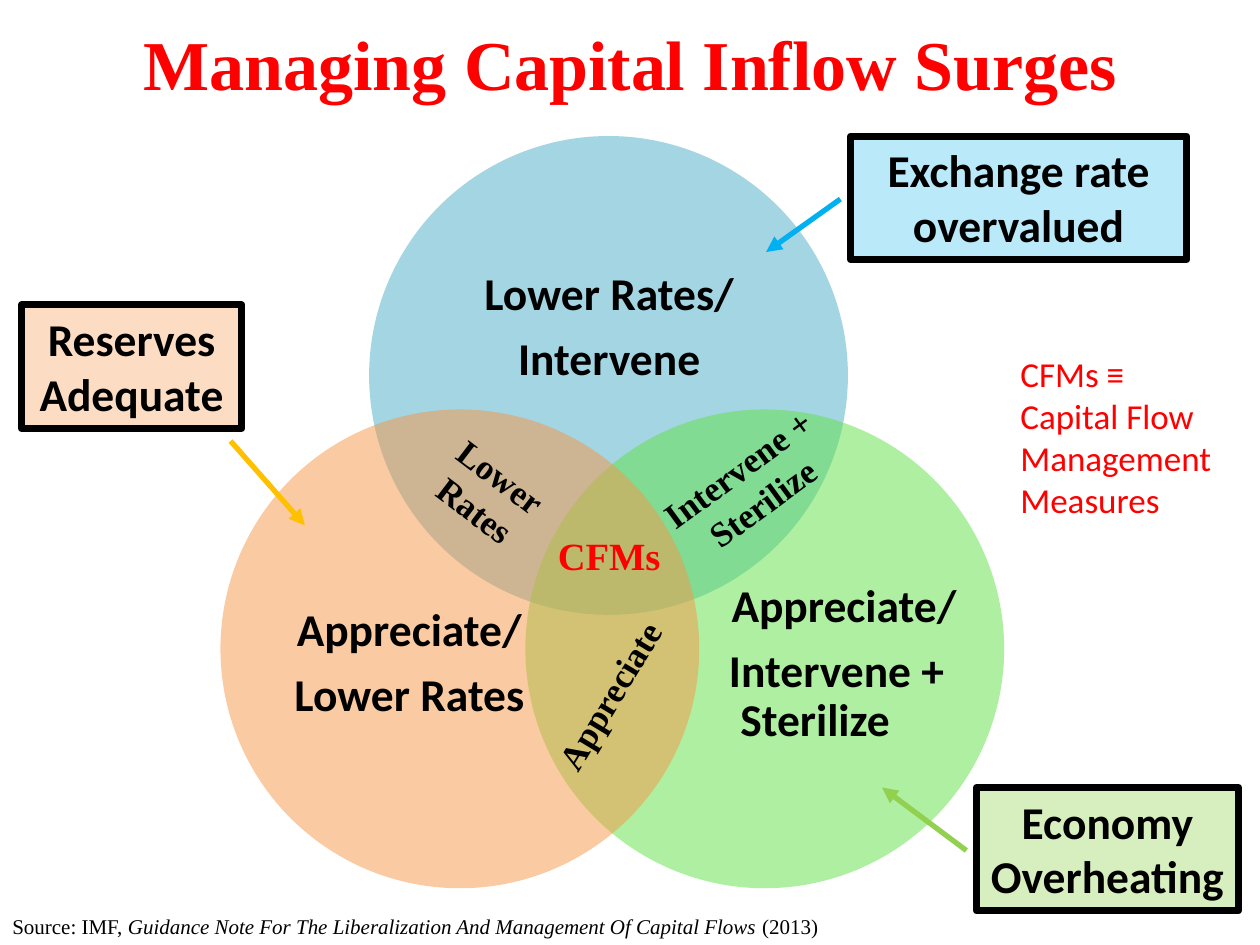
import lxml.etree
import pptx
import pptx.util
import pptx.dml.color
import pptx.enum.shapes
import pptx.enum.text
import pptx.oxml.ns
from dataclasses import dataclass

Inches = pptx.util.Inches
Pt = pptx.util.Pt
SHAPE = pptx.enum.shapes.MSO_SHAPE
ALIGN = pptx.enum.text.PP_ALIGN
ANCHOR = pptx.enum.text.MSO_ANCHOR


@dataclass(frozen=True)
class Theme:
    serif: str = "Times New Roman"
    sans: str = "Calibri"
    black: str = "000000"
    red: str = "FF0000"
    teal: str = "4BACC6"
    green: str = "60E146"
    orange: str = "F79646"
    blue: str = "00B0F0"
    lime: str = "92D050"
    gold: str = "FFC000"
    title: int = 40
    large: int = 26
    core: int = 22
    note: int = 20
    small: int = 12


def color(code):
    return pptx.dml.color.RGBColor.from_string(code)


def child(node, tag, **attrs):
    """Append an empty drawing element with the given attributes."""
    lxml.etree.SubElement(node, pptx.oxml.ns.qn(tag), attrs)


def put(frame, lines, font, size, ink=Theme.black, bold=False,
        align=ALIGN.CENTER, anchor=ANCHOR.TOP, inset=None, space=None,
        after=None, indents=()):
    """Write paragraphs; each line is a string or a list of (text, italic) runs."""
    frame.word_wrap = True
    frame.vertical_anchor = anchor
    if inset is not None:
        frame.margin_left = frame.margin_right = Inches(inset)
        frame.margin_top = frame.margin_bottom = Inches(inset)
    for i, line in enumerate(lines):
        para = frame.paragraphs[0] if i == 0 else frame.add_paragraph()
        para.alignment = align
        if space:
            para.line_spacing = space
        if after:
            para.space_after = Pt(after)
        if indents:
            para._p.get_or_add_pPr().set("indent", str(Inches(indents[i])))
        for text, slant in [(line, False)] if isinstance(line, str) else line:
            run = para.add_run()
            run.text = text
            run.font.name = font
            run.font.size = Pt(size)
            run.font.bold = bold
            run.font.italic = slant
            run.font.color.rgb = color(ink)


class Deck:
    def __init__(self, theme):
        self.theme = theme
        self.show = pptx.Presentation()
        self.show.slide_width = Inches(10)
        self.show.slide_height = Inches(7.5)
        self.slide = self.show.slides.add_slide(self.show.slide_layouts[5])

    def title(self, text):
        box = self.slide.shapes.title
        box.left, box.top = Inches(0), Inches(0)
        box.width, box.height = Inches(10), Inches(1)
        put(box.text_frame, [text], self.theme.serif, self.theme.title,
            ink=self.theme.red, bold=True, anchor=ANCHOR.MIDDLE)

    def shape(self, kind, at, fill, alpha):
        item = self.slide.shapes.add_shape(kind, *map(Inches, at))
        item.shadow.inherit = False
        item.fill.solid()
        item.fill.fore_color.rgb = color(fill)
        tint = item._element.spPr.find(".//" + pptx.oxml.ns.qn("a:srgbClr"))
        child(tint, "a:alpha", val=str(alpha * 1000))
        item.line.fill.background()
        return item

    def text(self, at, lines, font, size, turn=0, **form):
        box = self.slide.shapes.add_textbox(*map(Inches, at))
        box.rotation = turn
        put(box.text_frame, lines, font, size, **form)

    def disc(self, left, top, fill, area, lines, indents=()):
        self.shape(SHAPE.OVAL, (left, top, 3.8, 3.8), fill, 50)
        self.text(area, lines, self.theme.sans, self.theme.large, bold=True,
                  anchor=ANCHOR.MIDDLE, inset=0, space=0.9, after=9,
                  indents=indents)

    def label(self, at, text, turn):
        self.text(at, [text], self.theme.serif, self.theme.note, turn, bold=True)

    def callout(self, left, top, width, text, fill, alpha):
        box = self.shape(SHAPE.RECTANGLE, (left, top, width, 0.98), fill, alpha)
        box.line.color.rgb = color(self.theme.black)
        box.line.width = Pt(4)
        put(box.text_frame, [text], self.theme.sans, self.theme.large, bold=True)

    def arrow(self, start, end, ink):
        line = self.slide.shapes.add_connector(
            pptx.enum.shapes.MSO_CONNECTOR.STRAIGHT, *map(Inches, start + end))
        line.line.color.rgb = color(ink)
        line.line.width = Pt(3)
        props = line._element.spPr
        child(props.find(pptx.oxml.ns.qn("a:ln")), "a:tailEnd", type="triangle")
        child(props, "a:effectLst")


def main():
    theme = Theme()
    deck = Deck(theme)
    deck.title("Managing Capital Inflow Surges")

    # Three overlapping policy circles
    deck.disc(2.93, 1.08, theme.teal, (3.44, 1.75, 2.79, 1.71),
              ["Lower Rates/", "Intervene"])
    deck.disc(4.17, 3.25, theme.green, (5.33, 4.23, 2.28, 2.09),
              ["Appreciate/", "Intervene + Sterilize"], indents=(0.46, 0.34))
    deck.disc(1.75, 3.25, theme.orange, (2.11, 4.23, 2.28, 2.09),
              ["Appreciate/", "Lower Rates"])

    # Labels in the overlaps
    deck.label((5.06, 3.47, 1.78, 0.77), "Intervene + Sterilize", 323.8)
    deck.label((3.26, 3.53, 1.23, 0.77), "Lower Rates", 37.3)
    deck.label((4.07, 5.3, 1.53, 0.44), "Appreciate", 301.2)
    deck.text((4.33, 4.17, 1.02, 0.47), ["CFMs"], theme.serif, theme.core,
              ink=theme.red, bold=True, align=ALIGN.LEFT)

    # Conditions and their arrows
    deck.callout(6.75, 1.08, 2.67, "Exchange rate overvalued", theme.blue, 27)
    deck.callout(0.17, 2.42, 1.75, "Reserves Adequate", theme.orange, 32)
    deck.callout(7.75, 6.25, 2.08, "Economy Overheating", theme.lime, 36)
    deck.arrow((6.67, 1.58), (6.08, 2), theme.blue)
    deck.arrow((7.67, 6.75), (7, 6.25), theme.lime)
    deck.arrow((1.83, 3.5), (2.42, 4.17), theme.gold)

    # Source and key
    source = [("Source: IMF, ", False),
              ("Guidance Note For The Liberalization And Management "
               "Of Capital Flows", True),
              (" (2013)", False)]
    deck.text((0, 7.2, 8.67, 0.3), [source], theme.serif, theme.small,
              align=ALIGN.LEFT)
    deck.text((8, 2.75, 1.83, 1.45),
              ["CFMs ≡", "Capital Flow Management Measures"],
              theme.sans, theme.note, ink=theme.red, align=ALIGN.LEFT)

    deck.show.save("out.pptx")


if __name__ == "__main__":
    main()
